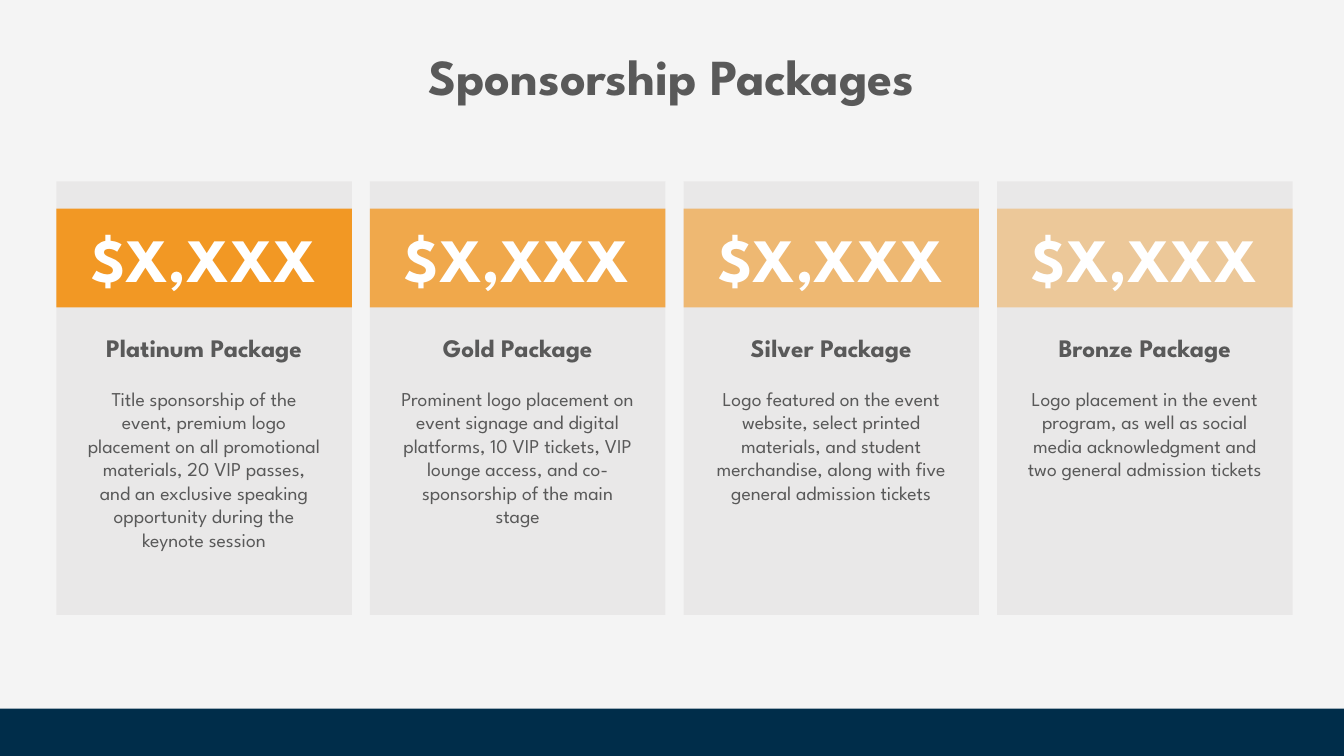
from lxml import etree
from pptx import Presentation
from pptx import util as u
from pptx.dml.color import RGBColor
from pptx.enum import shapes, text
from pptx.oxml.ns import qn

FONT = "League Spartan"
COLORS = {
    "page": "F4F4F4",
    "card": "E7E6E6",
    "price": "F29824",
    "footer": "002D4A",
    "gray": "595959",
    "white": "FFFFFF",
}
PACKAGES = [
    ("Platinum Package", 100,
     "Title sponsorship of the event, premium logo placement on all promotional materials, "
     "20 VIP passes, and an exclusive speaking opportunity during the keynote session"),
    ("Gold Package", 80,
     "Prominent logo placement on event signage and digital platforms, 10 VIP tickets, "
     "VIP lounge access, and co-sponsorship of the main stage"),
    ("Silver Package", 60,
     "Logo featured on the event website, select printed materials, and student merchandise, "
     "along with five general admission tickets"),
    ("Bronze Package", 40,
     "Logo placement in the event program, as well as social media acknowledgment "
     "and two general admission tickets"),
]

# Column grid, in inches
WIDTH, HEIGHT = 13.33, 7.5
LEFT, STEP, CARD_WIDTH = 0.56, 3.11, 2.93
CARD_TOP, CARD_HEIGHT = 1.8, 4.3
PRICE_TOP, PRICE_HEIGHT = 2.07, 0.98
FOOTER_HEIGHT = 0.47


def add_block(left, top, width, height, color, opacity=100):
    block = page.shapes.add_shape(
        shapes.MSO_SHAPE.RECTANGLE, *map(u.Inches, (left, top, width, height)))
    block.shadow.inherit = False
    block.line.fill.background()
    block.fill.solid()
    block.fill.fore_color.rgb = RGBColor.from_string(COLORS[color])
    if opacity < 100:
        tint = block.fill._xPr.find(".//" + qn("a:srgbClr"))
        etree.SubElement(tint, qn("a:alpha"), val=str(opacity * 1000))
    return block


def style(para, size, color, bold):
    para.alignment = text.PP_ALIGN.CENTER
    for span in para.runs:
        span.font.name = FONT
        span.font.size = u.Pt(size)
        span.font.bold = bold
        span.font.color.rgb = RGBColor.from_string(COLORS[color])


# Page
deck = Presentation()
deck.slide_width, deck.slide_height = u.Inches(WIDTH), u.Inches(HEIGHT)
page = deck.slides.add_slide(deck.slide_layouts[5])
page.background.fill.solid()
page.background.fill.fore_color.rgb = RGBColor.from_string(COLORS["page"])

# Title
title = page.shapes.title
title.left, title.top, title.width, title.height = map(u.Inches, (2.82, 0.4, 7.68, 0.71))
title.text_frame.text = "Sponsorship Packages"
title.text_frame.vertical_anchor = text.MSO_ANCHOR.TOP
title.text_frame.auto_size = text.MSO_AUTO_SIZE.SHAPE_TO_FIT_TEXT
style(title.text_frame.paragraphs[0], 36, "gray", True)

# Package cards with price bands
for column, (name, opacity, benefits) in enumerate(PACKAGES):
    left = LEFT + column * STEP

    card = add_block(left, CARD_TOP, CARD_WIDTH, CARD_HEIGHT, "card", 80)
    frame = card.text_frame
    frame.margin_left = frame.margin_right = frame.margin_bottom = u.Inches(0.3)
    frame.margin_top = u.Inches(1.5)
    frame.vertical_anchor = text.MSO_ANCHOR.TOP
    frame.text = f"{name}\n{benefits}"
    heading, body = frame.paragraphs
    style(heading, 18, "gray", True)
    style(body, 14, "gray", False)
    body.space_before = u.Pt(17)

    price = add_block(left, PRICE_TOP, CARD_WIDTH, PRICE_HEIGHT, "price", opacity)
    price.text_frame.text = "$X,XXX"
    price.text_frame.vertical_anchor = text.MSO_ANCHOR.MIDDLE
    style(price.text_frame.paragraphs[0], 44, "white", True)

# Footer band
add_block(0, HEIGHT - FOOTER_HEIGHT, WIDTH, FOOTER_HEIGHT, "footer")

deck.save("out.pptx")
